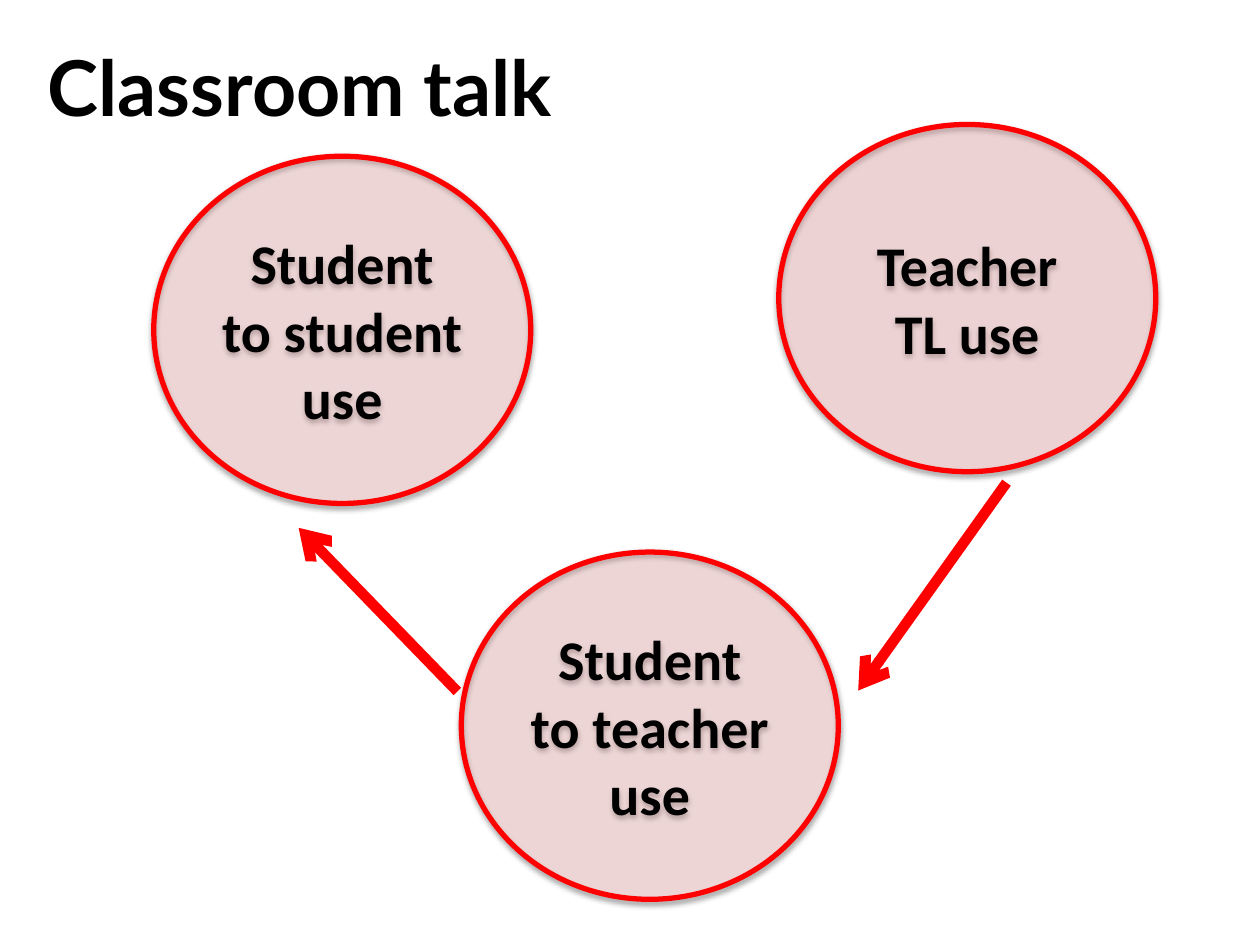
from dataclasses import dataclass

from lxml import etree
from pptx import Presentation
from pptx.dml.color import RGBColor
from pptx.enum.shapes import MSO_CONNECTOR, MSO_SHAPE
from pptx.enum.text import MSO_ANCHOR, PP_ALIGN
from pptx.oxml.ns import qn
from pptx.slide import Slide
from pptx.text.text import TextFrame
from pptx.util import Cm, Pt

ELLIPSE = MSO_SHAPE.OVAL
STRAIGHT = MSO_CONNECTOR.STRAIGHT
MIDDLE = MSO_ANCHOR.MIDDLE
LEFT, CENTER = PP_ALIGN.LEFT, PP_ALIGN.CENTER

BLACK = RGBColor(0x00, 0x00, 0x00)
RED = RGBColor(0xFF, 0x00, 0x00)
PINK = RGBColor(0xFF, 0x99, 0x99)

TITLE_ONLY = 5
BUBBLE_WIDTH, BUBBLE_HEIGHT = Cm(7.6), Cm(7)


@dataclass(frozen=True)
class Bubble:
    label: str
    left: float
    top: float
    opacity: int  # percent


@dataclass(frozen=True)
class Arrow:
    start: tuple[float, float]
    end: tuple[float, float]


BUBBLES = (
    Bubble("Teacher TL use", 15.7, 2.51, 25),
    Bubble("Student to teacher use", 9.3, 11.13, 23),
    Bubble("Student to student use", 3.1, 3.15, 23),
)
ARROWS = (
    Arrow((20.29, 9.73), (17.3, 13.92)),
    Arrow((9.22, 13.94), (6.02, 10.64)),
)


def write_text(frame: TextFrame, text: str, *, font: str, size: float,
               align: PP_ALIGN) -> None:
    frame.word_wrap = True
    frame.vertical_anchor = MIDDLE
    paragraph = frame.paragraphs[0]
    paragraph.alignment = align
    run = paragraph.add_run()
    run.text = text
    run.font.name = font
    run.font.size = Pt(size)
    run.font.bold = True
    run.font.color.rgb = BLACK


def set_alpha(color: etree._Element, percent: int) -> None:
    etree.SubElement(color, qn("a:alpha"), val=str(percent * 1000))


def add_shadow(effects: etree._Element) -> None:
    """Add a soft black shadow that falls straight down."""
    shadow = etree.SubElement(
        effects, qn("a:outerShdw"), blurRad=str(Pt(3.1)), dist=str(Pt(1.6)),
        dir=str(90 * 60000), rotWithShape="0")
    set_alpha(etree.SubElement(shadow, qn("a:srgbClr"), val=str(BLACK)), 38)


def draw_bubble(slide: Slide, bubble: Bubble) -> None:
    ellipse = slide.shapes.add_shape(
        ELLIPSE, Cm(bubble.left), Cm(bubble.top), BUBBLE_WIDTH, BUBBLE_HEIGHT)
    ellipse.fill.solid()
    ellipse.fill.fore_color.rgb = PINK
    ellipse.line.color.rgb = RED
    ellipse.line.width = Pt(3)
    ellipse.shadow.inherit = False
    properties = ellipse._element.spPr
    set_alpha(properties.find(f"{qn('a:solidFill')}/{qn('a:srgbClr')}"),
              bubble.opacity)
    add_shadow(properties.find(qn("a:effectLst")))
    write_text(ellipse.text_frame, bubble.label, font="Calibri", size=32,
               align=CENTER)


def draw_arrow(slide: Slide, arrow: Arrow) -> None:
    connector = slide.shapes.add_connector(
        STRAIGHT, *map(Cm, arrow.start), *map(Cm, arrow.end))
    connector.line.color.rgb = RED
    connector.line.width = Pt(6)
    properties = connector._element.spPr
    etree.SubElement(properties.find(qn("a:ln")), qn("a:tailEnd"), type="arrow")
    etree.SubElement(properties, qn("a:effectLst"))


def main() -> None:
    presentation = Presentation()
    presentation.slide_width, presentation.slide_height = Cm(25.4), Cm(19.05)
    slide = presentation.slides.add_slide(
        presentation.slide_layouts[TITLE_ONLY])

    title = slide.shapes.title
    title.left, title.top = Cm(0.71), Cm(0.13)
    title.width, title.height = Cm(22.86), Cm(3.18)
    write_text(title.text_frame, "Classroom talk", font="Lato", size=44,
               align=LEFT)

    for bubble in BUBBLES:
        draw_bubble(slide, bubble)
    for arrow in ARROWS:
        draw_arrow(slide, arrow)

    presentation.save("out.pptx")


if __name__ == "__main__":
    main()
